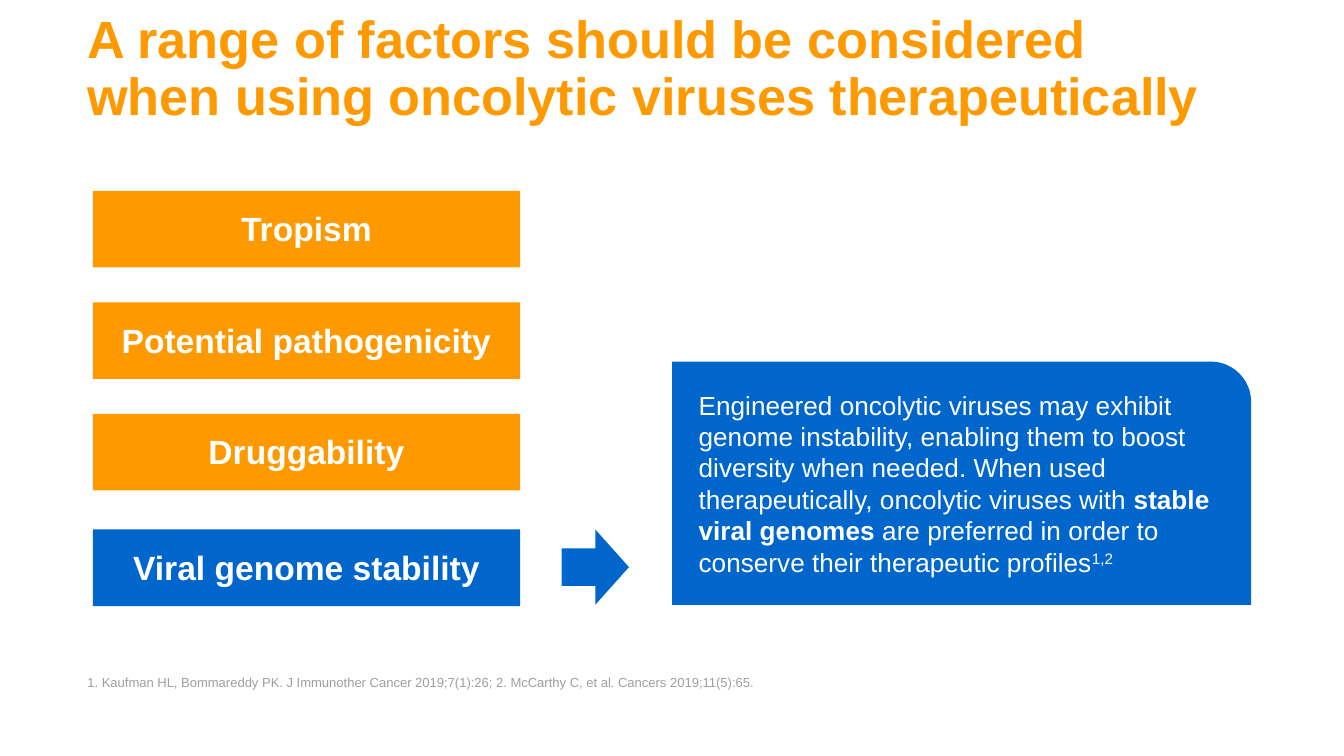
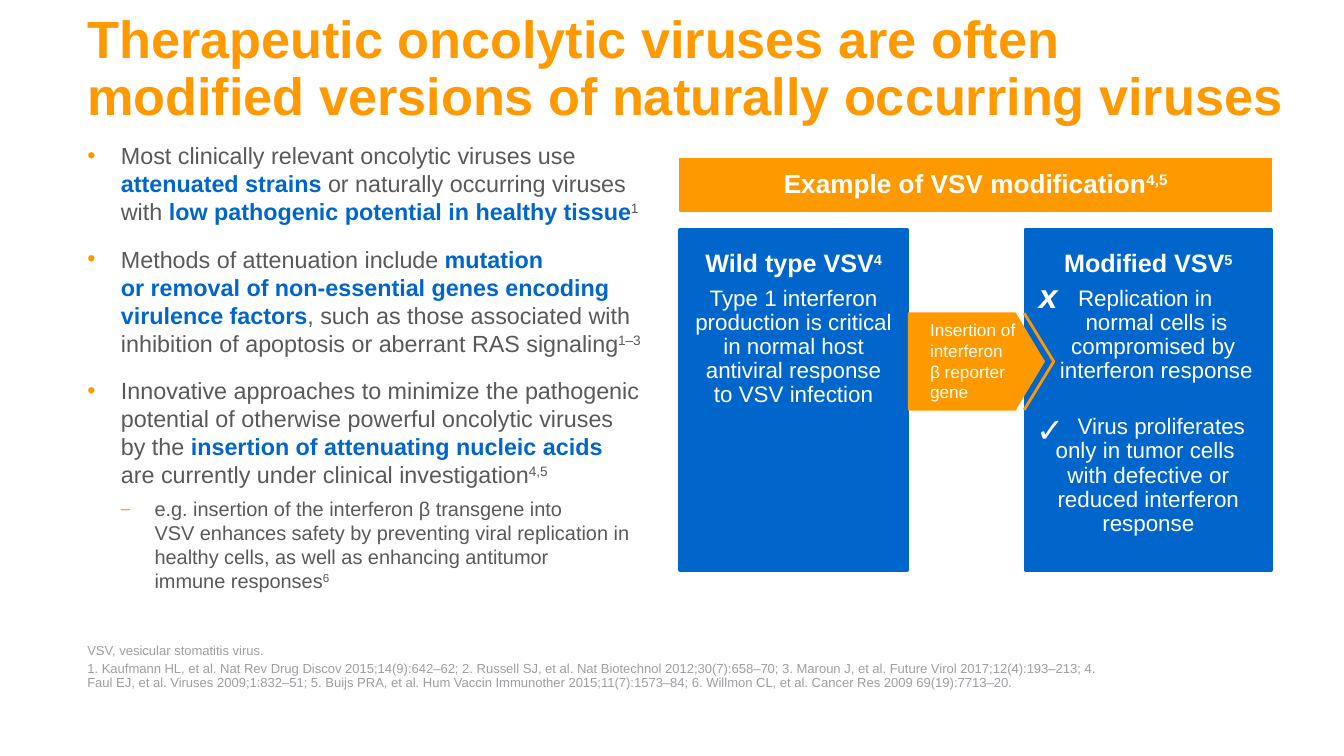
from copy import deepcopy

from lxml import etree
from pptx import Presentation
from pptx.dml.color import RGBColor
from pptx.enum import shapes, text
from pptx.oxml.ns import qn
from pptx.util import Inches, Pt

ORANGE, BLUE, WHITE = "FF9900", "0066CC", "FFFFFF"
BODY_GREY, NOTE_GREY = "58595B", "9E9FA2"
FONT = "Arial"
SHAPE = shapes.MSO_SHAPE
TOP, MIDDLE, BOTTOM = (text.MSO_ANCHOR.TOP, text.MSO_ANCHOR.MIDDLE,
                       text.MSO_ANCHOR.BOTTOM)
CENTER = text.PP_ALIGN.CENTER


def place(shape, box=None, insets=(0, 0, 0, 0), anchor=TOP, fill=None, line=None):
    """Set the box, colours and text frame; line is a (colour, points) pair."""
    if box:
        for side, length in zip(("left", "top", "width", "height"), box):
            setattr(shape, side, Inches(length))
    if fill:
        shape.fill.solid()
        shape.fill.fore_color.rgb = RGBColor.from_string(fill)
    if not shape.is_placeholder:
        shape.shadow.inherit = False
        if line:
            shape.line.color.rgb = RGBColor.from_string(line[0])
            shape.line.width = Pt(line[1])
        else:
            shape.line.fill.background()
    frame = shape.text_frame
    frame.word_wrap = True
    frame.auto_size = text.MSO_AUTO_SIZE.NONE
    frame.vertical_anchor = anchor
    for side, inset in zip(("left", "top", "right", "bottom"), insets):
        setattr(frame, f"margin_{side}", Inches(inset))
    return shape


def write(shape, runs, size, color=WHITE, bold=False, italic=False,
          indent=(0, 0), bullet=None, **layout):
    """Add a paragraph of (text, style) runs.

    Styles: "b" bold, "h" bold highlight, "^" superscript.
    """
    frame = shape.text_frame
    paragraph = frame.paragraphs[0]
    if paragraph.runs:
        paragraph = frame.add_paragraph()
    formats = {"alignment": text.PP_ALIGN.LEFT, "space_before": Pt(0),
               "space_after": Pt(0), **layout}
    for name, value in formats.items():
        setattr(paragraph, name, value)

    properties = paragraph._p.get_or_add_pPr()
    for name, length in zip(("marL", "indent"), indent):
        properties.set(name, str(Inches(length)))
    if bullet:
        bullet_color = etree.SubElement(properties, qn("a:buClr"))
        etree.SubElement(bullet_color, qn("a:srgbClr"), val=ORANGE)
        if bullet == "–":
            etree.SubElement(properties, qn("a:buSzPct"), val="85000")
        etree.SubElement(properties, qn("a:buFont"), typeface=FONT)
        etree.SubElement(properties, qn("a:buChar"), char=bullet)
    else:
        etree.SubElement(properties, qn("a:buNone"))

    for words, style in runs:
        for number, part in enumerate(words.split("\n")):
            if number:
                paragraph.add_line_break()
                paragraph._p[-1].append(deepcopy(run._r.rPr))
            if not part:
                continue
            run = paragraph.add_run()
            run.text = part
            look = {"name": FONT, "size": Pt(size), "italic": italic,
                    "bold": bold or style in ("b", "h")}
            for name, value in look.items():
                setattr(run.font, name, value)
            run.font.color.rgb = RGBColor.from_string(BLUE if style == "h" else color)
            if style == "^":
                run._r.get_or_add_rPr().set("baseline", "30000")


deck = Presentation()
deck.slide_width = Inches(10)
deck.slide_height = deck.slide_width * 9 // 16

# Shared frame: title and references
outline = [
    (1, 8.53, "A range of factors should be considered when using oncolytic viruses "
     "therapeutically",
     8.47, ["1. Kaufman HL, Bommareddy PK. J Immunother Cancer 2019;7(1):26; "
            "2. McCarthy C, et al. Cancers 2019;11(5):65."]),
    (3, 9.06, "Therapeutic oncolytic viruses are often \n"
     "modified versions of naturally occurring viruses",
     7.53, ["VSV, vesicular stomatitis virus.",
            "1. Kaufmann HL, et al. Nat Rev Drug Discov 2015;14(9):642–62; "
            "2. Russell SJ, et al. Nat Biotechnol 2012;30(7):658–70; "
            "3. Maroun J, et al. Future Virol 2017;12(4):193–213; "
            "4. Faul EJ, et al. Viruses 2009;1:832–51; "
            "5. Buijs PRA, et al. Hum Vaccin Immunother 2015;11(7):1573–84; "
            "6. Willmon CL, et al. Cancer Res 2009 69(19):7713–20."]),
]
for layout_number, title_width, heading, notes_width, notes in outline:
    slide = deck.slides.add_slide(deck.slide_layouts[layout_number])
    title = place(slide.shapes.title, (0.65, 0.3, title_width, 0.64), anchor=BOTTOM)
    write(title, [(heading, "")], 28, ORANGE, bold=True, line_spacing=0.9)
    references = place(list(slide.placeholders)[-1],
                       (0.65, 4.81, notes_width, 0.33), anchor=BOTTOM)
    for note in notes:
        write(references, [(note, "")], 7, NOTE_GREY, line_spacing=0.9,
              space_after=Pt(2))

factors_slide, modification_slide = deck.slides

# Slide 1: factors, the last one explained
factors = [("Tropism", 1.42, ORANGE), ("Potential pathogenicity", 2.25, ORANGE),
           ("Druggability", 3.08, ORANGE), ("Viral genome stability", 3.94, BLUE)]
for label, top, color in factors:
    factor = place(factors_slide.shapes.add_shape(SHAPE.RECTANGLE, 0, 0, 0, 0),
                   (0.69, top, 3.18, 0.57), (0.05, 0.13, 0.05, 0.13), TOP, color)
    write(factor, [(label, "")], 18, bold=True, alignment=CENTER)

place(factors_slide.shapes.add_shape(SHAPE.RIGHT_ARROW, 0, 0, 0, 0),
      (4.18, 3.94, 0.5, 0.56), fill=BLUE)
explanation = place(
    factors_slide.shapes.add_shape(SHAPE.ROUND_1_RECTANGLE, 0, 0, 0, 0),
    (5, 2.69, 4.31, 1.81), (0.1, 0.2, 0.1, 0.2), MIDDLE, BLUE)
write(explanation, [
    ("Engineered oncolytic viruses may exhibit genome instability, enabling them to "
     "boost diversity when needed. When used therapeutically, oncolytic viruses with ",
     ""),
    ("stable viral genomes ", "b"),
    ("are preferred in order to conserve their therapeutic profiles", ""),
    ("1,2", "^")], 14, indent=(0.1, 0))

# Slide 2: attenuation methods
methods = place(modification_slide.placeholders[1], (0.65, 1.05, 4.13, 3.57))
method_points = [
    [("Most clinically relevant oncolytic viruses use ", ""),
     ("attenuated strains ", "h"), ("or naturally occurring viruses with ", ""),
     ("low pathogenic potential in healthy tissue", "h"), ("1", "^")],
    [("Methods of attenuation include ", ""),
     ("mutation \nor removal of non-essential genes encoding virulence factors", "h"),
     (", such as those associated with inhibition of apoptosis or aberrant RAS "
      "signaling", ""), ("1–3", "^")],
    [("Innovative approaches to minimize the pathogenic potential of otherwise "
      "powerful oncolytic viruses \nby the ", ""),
     ("insertion of attenuating nucleic acids \n", "h"),
     ("are currently under clinical investigation", ""), ("4,5", "^")],
]
for point in method_points:
    write(methods, point, 12.5, BODY_GREY, indent=(0.25, -0.25), bullet="•",
          space_before=Pt(6), space_after=Pt(4.5))
write(methods, [
    ("e.g. insertion of the interferon β transgene into \nVSV enhances safety by "
     "preventing viral replication in healthy cells, as well as enhancing antitumor \n"
     "immune responses", ""), ("6", "^")],
    10.65, BODY_GREY, indent=(0.5, -0.25), bullet="–", level=1, space_after=Pt(4.5))

# Slide 2: wild type against modified virus
centered = {"alignment": CENTER, "line_spacing": 0.9, "space_after": Pt(4.5)}
banner = place(modification_slide.shapes.add_shape(SHAPE.RECTANGLE, 0, 0, 0, 0),
               (5.06, 1.18, 4.4, 0.39), (0.07,) * 4, MIDDLE, ORANGE, (ORANGE, 0.75))
write(banner, [("Example of VSV modification", ""), ("4,5", "^")], 14, bold=True,
      **centered)

# Each statement: words, left and first-line indent, space after
panels = [
    (5.06, 1.69, "Wild type VSV", "4",
     [("Type 1 interferon production is critical in normal host antiviral response\n"
       "to VSV infection", (0, 0), 4.5)]),
    (7.63, 1.83, "Modified VSV", "5",
     [("Replication in \nnormal cells is compromised by \ninterferon response",
       (0.12, -0.12), 17),
      ("Virus proliferates \nonly in tumor cells \nwith defective or reduced "
       "interferon response", (0, 0.24), 4.5)]),
]
for left, width, name, citation, statements in panels:
    panel = place(modification_slide.shapes.add_shape(SHAPE.RECTANGLE, 0, 0, 0, 0),
                  (left, 1.71, width, 2.53), (0.05, 0.16, 0.05, 0.05),
                  fill=BLUE, line=(BLUE, 2))
    write(panel, [(name, ""), (citation, "^")], 13.5, bold=True, **centered)
    for words, indent, gap in statements:
        write(panel, [(words, "")], 12, indent=indent,
              **{**centered, "space_after": Pt(gap)})

for mark, left, top in [("✓", 7.66, 2.99), ("x", 7.68, 2)]:
    verdict = place(modification_slide.shapes.add_textbox(0, 0, 0, 0),
                    (left, top, 0.37, 0.4), (0.05,) * 4)
    write(verdict, [(mark, "")], 18, bold=True, italic=True)

insertion = place(modification_slide.shapes.add_shape(SHAPE.PENTAGON, 0, 0, 0, 0),
                  (6.76, 2.33, 1.01, 0.72), (0.16, 0.05, 0.1, 0.05),
                  fill=ORANGE, line=(ORANGE, 0.75))
insertion.adjustments[0] = 0.3
write(insertion, [("Insertion of interferon β reporter gene", "")], 9.2)

tip = modification_slide.shapes.build_freeform(Inches(7.62), Inches(2.33))
tip.add_line_segments([(Inches(7.84), Inches(2.69)), (Inches(7.62), Inches(3.05))],
                      close=False)
chevron = place(tip.convert_to_shape(), line=(ORANGE, 1.5))
chevron.fill.background()

deck.save("out.pptx")
